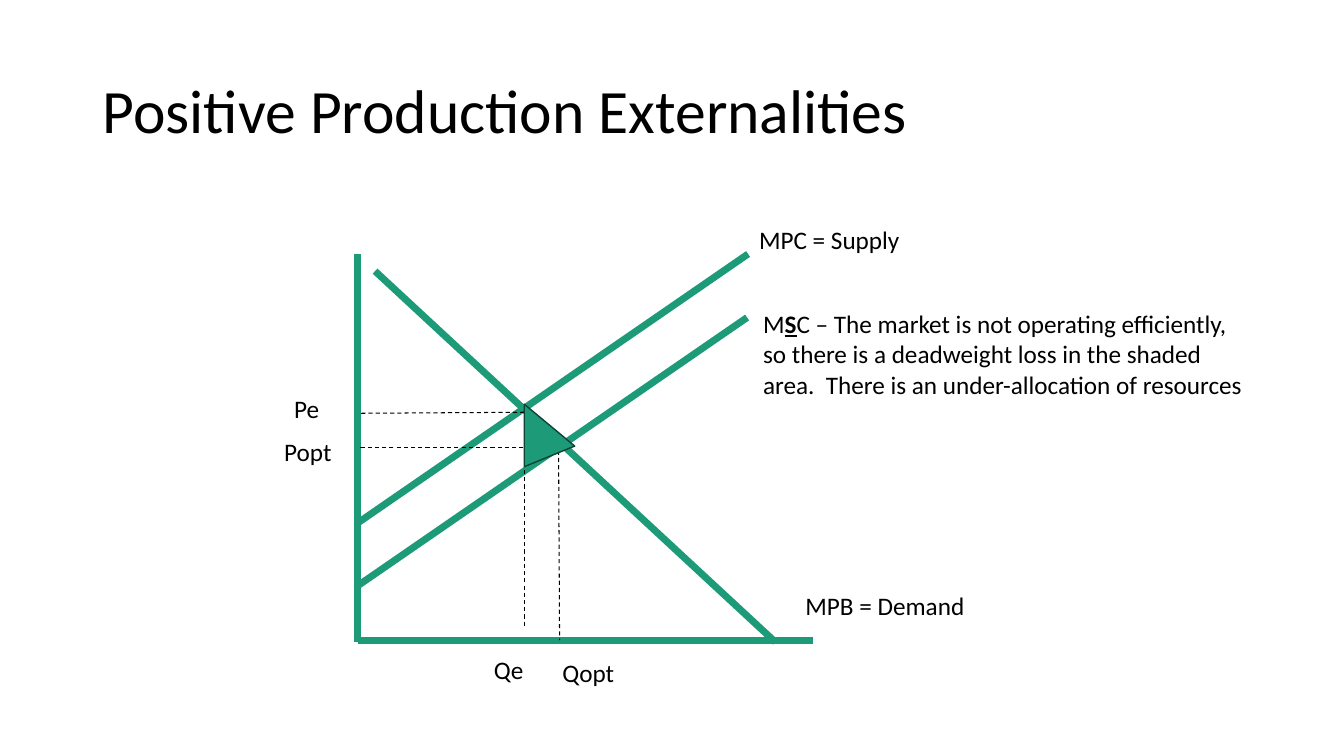
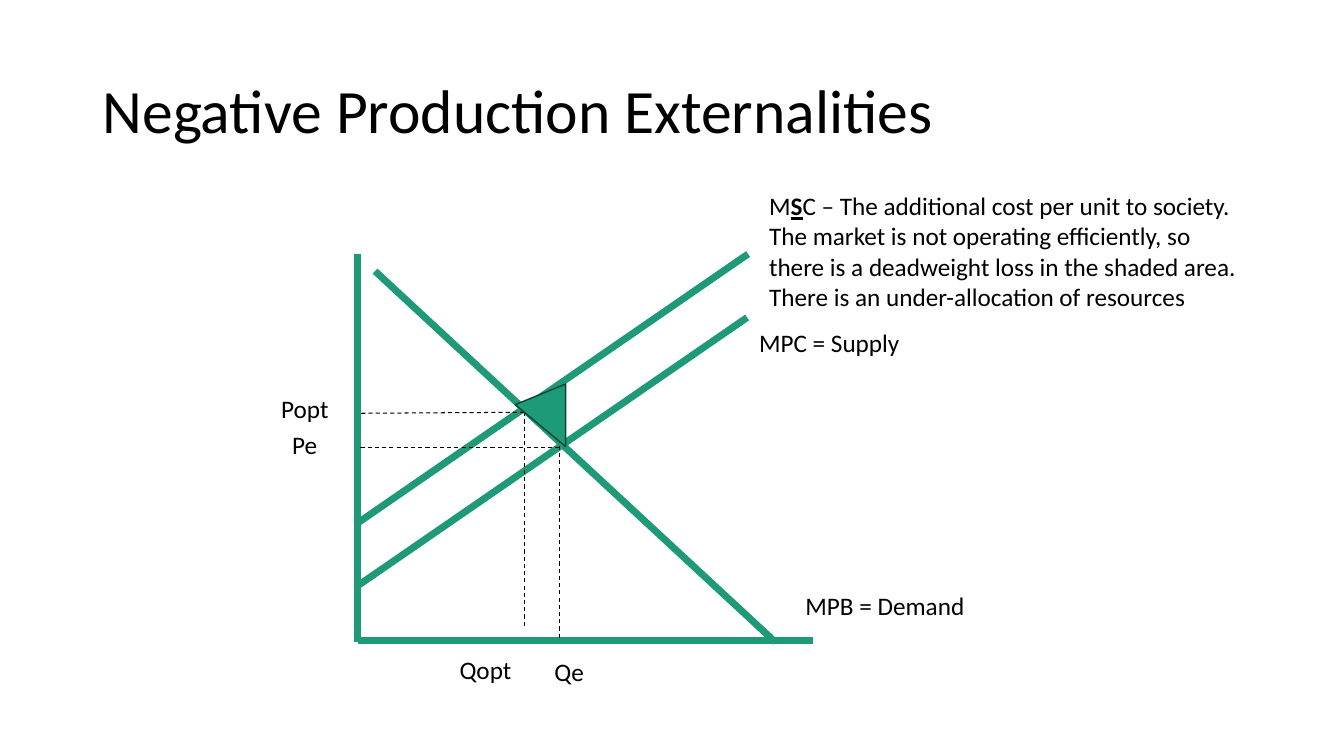
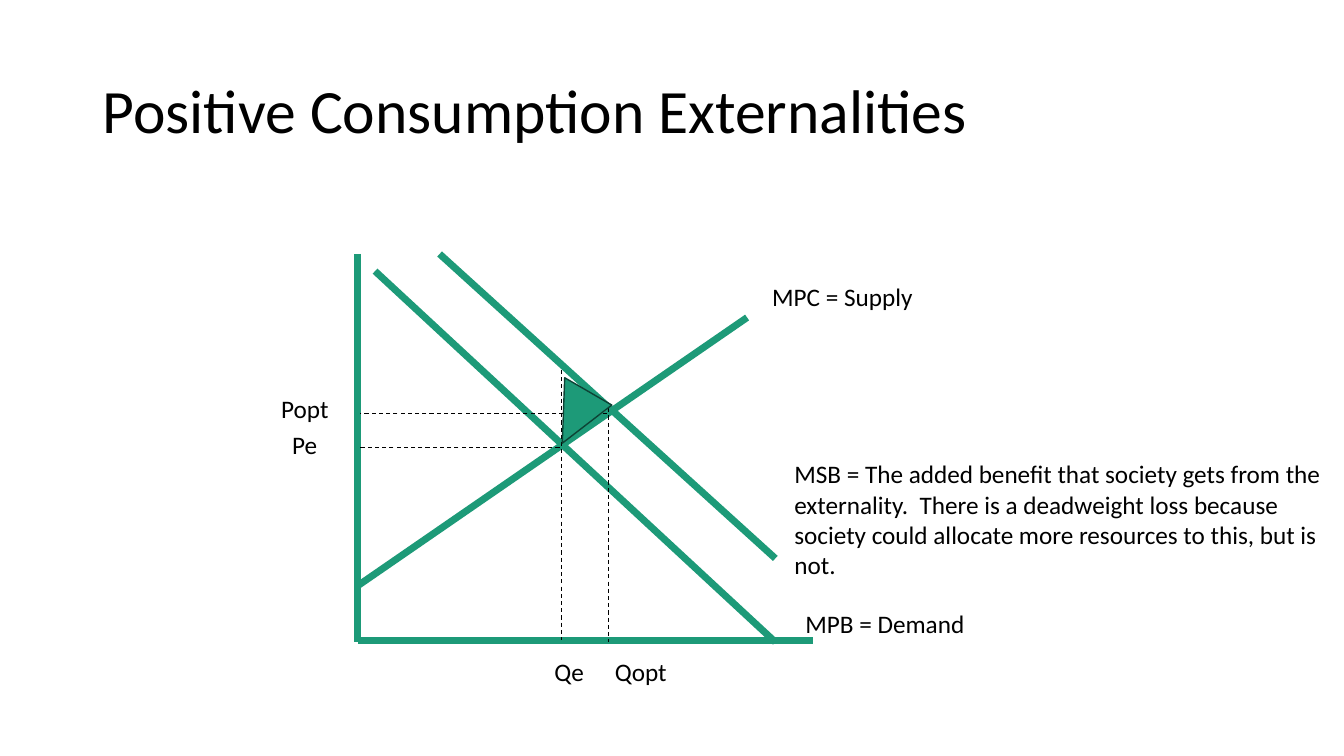
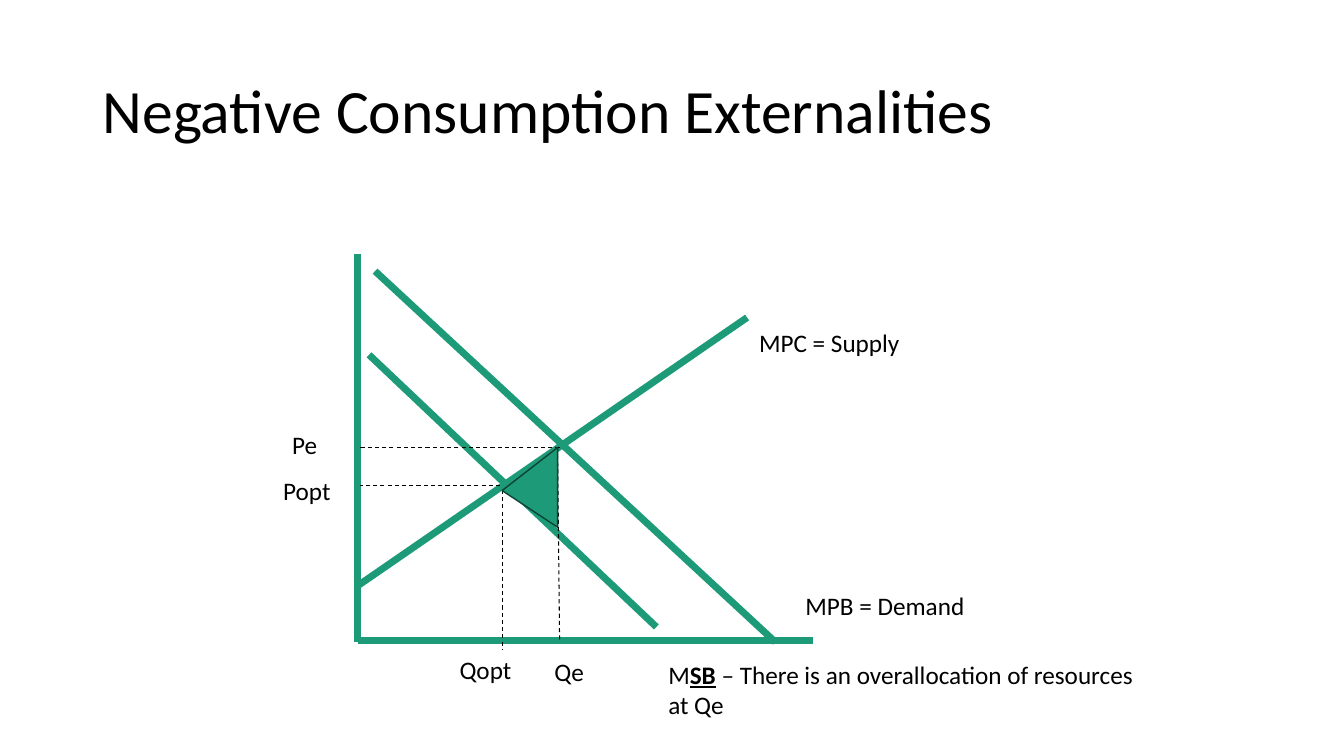
"""Build four supply and demand slides on externalities."""
from lxml import etree
from pptx import Presentation
from pptx.dml.color import RGBColor
from pptx.enum.dml import MSO_LINE
from pptx.enum.shapes import MSO_CONNECTOR, MSO_SHAPE
from pptx.enum.text import MSO_ANCHOR, MSO_AUTO_SIZE
from pptx.oxml.ns import qn
from pptx.util import Pt

PX = 9144
FONT = "Calibri"
HUES = {"ink": "000000", "green": "1D9A78", "edge": "0D4335"}
DASH = MSO_LINE.DASH
LINE = MSO_CONNECTOR.STRAIGHT
WEDGE = MSO_SHAPE.ISOSCELES_TRIANGLE
TOP, MID = MSO_ANCHOR.TOP, MSO_ANCHOR.MIDDLE
GROW, FIXED = MSO_AUTO_SIZE.SHAPE_TO_FIT_TEXT, MSO_AUTO_SIZE.NONE


def text(page, words, box, size=18, hue="ink", anchor=TOP, fit=GROW, space=1.0):
    """Add a text box; parts between asterisks are bold and underlined."""
    frame = page.shapes.add_textbox(*[n * PX for n in box]).text_frame
    frame.word_wrap = True
    frame.auto_size = fit
    frame.vertical_anchor = anchor
    para = frame.paragraphs[0]
    para.line_spacing = space
    for i, part in enumerate(words.split("*")):
        run = para.add_run()
        run.text = part
        font = run.font
        font.name, font.size = FONT, Pt(size)
        font.color.rgb = RGBColor.from_string(HUES[hue])
        if i % 2:
            font.bold = font.underline = True


def stroke(page, ends, hue="green", width=5, dash=None):
    """Add a straight line without a shadow."""
    rule = page.shapes.add_connector(LINE, *[n * PX for n in ends])
    rule.line.color.rgb = RGBColor.from_string(HUES[hue])
    rule.line.width = Pt(width)
    if dash:
        rule.line.dash_style = dash
    etree.SubElement(rule._element.spPr, qn("a:effectLst"))


BASE = [
    (355, 252, 355, 637),
    (806, 635, 355, 635),
    (741, 315, 355, 581),
    (372, 269, 769, 637),
]
LEVEL = (555, 444, 357, 444)
SIZES = {"MPC = Supply": (181, 40), "MPB = Demand": (181, 40),
         "Qopt": (90, 40), "Qe": (60, 40), "Popt": (75, 40), "Pe": (60, 40)}

PAGES = [
    {
        "title": "Positive Production Externalities",
        "curve": (742, 252, 356, 518),
        "spots": [(743, 218), (789, 581), (548, 647), (480, 644), (272, 428), (282, 385)],
        "dashes": [(520, 409, 357, 410), (520, 409, 520, 622), (554, 440, 555, 635)],
        "wedge": (514, 407, 62, 50), "turn": 90, "peak": 0.67,
        "note": "M*S*C – The market is not operating efficiently, so there is a deadweight "
                "loss in the shaded area.  There is an under-allocation of resources",
        "box": (747, 301, 497, 101),
    },
    {
        "title": "Negative Production Externalities",
        "curve": (742, 252, 356, 518),
        "spots": [(743, 320), (789, 581), (446, 644), (540, 646), (269, 385), (280, 421)],
        "dashes": [(520, 409, 357, 410), (520, 409, 520, 622), (555, 385, 555, 635)],
        "wedge": (505, 387, 62, 50), "turn": 270, "peak": 0.67,
        "note": "M*S*C – The additional cost per unit to society.  The market is not "
                "operating efficiently, so there is a deadweight loss in the shaded area.  "
                "There is an under-allocation of resources",
        "box": (753, 184, 497, 131),
    },
    {
        "title": "Positive Consumption Externalities",
        "curve": (769, 554, 436, 252),
        "spots": [(756, 274), (789, 599), (600, 646), (540, 646), (269, 385), (280, 421)],
        "dashes": [(602, 410, 357, 410), (557, 367, 557, 635), (604, 405, 604, 637)],
        "wedge": (536, 376, 62, 50), "turn": 322.4, "peak": 0.67,
        "note": "MSB = The added benefit that society gets from the externality.  There is "
                "a deadweight loss because society could allocate more resources to this, "
                "but is not.",
        "box": (778, 450, 551, 131),
    },
    {
        "title": "Negative Consumption Externalities",
        "curve": (651, 622, 366, 352),
        "spots": [(743, 320), (789, 581), (446, 644), (540, 646), (271, 467), (280, 421)],
        "dashes": [(496, 482, 357, 482), (498, 486, 498, 644), (553, 444, 555, 635)],
        "wedge": (486, 456, 79, 55), "turn": 270, "peak": 0.46,
        "note": "M*SB* – There is an overallocation of resources at Qe",
        "box": (653, 649, 497, 71),
    },
]

deck = Presentation()
deck.slide_width, deck.slide_height = 1333 * PX, 750 * PX
blank = deck.slide_layouts[6]

for data in PAGES:
    page = deck.slides.add_slide(blank)
    text(page, data["title"], (92, 40, 1150, 145), size=44, anchor=MID, fit=FIXED, space=0.9)
    for ends in BASE + [data["curve"]]:
        stroke(page, ends)
    for ends in [LEVEL] + data["dashes"]:
        stroke(page, ends, hue="ink", width=0.75, dash=DASH)
    for (label, size), spot in zip(SIZES.items(), data["spots"]):
        text(page, label, spot + size)
    wedge = page.shapes.add_shape(WEDGE, *[n * PX for n in data["wedge"]])
    wedge.adjustments[0] = data["peak"]
    wedge.rotation = data["turn"]
    wedge.shadow.inherit = False
    wedge.fill.solid()
    wedge.fill.fore_color.rgb = RGBColor.from_string(HUES["green"])
    wedge.line.color.rgb = RGBColor.from_string(HUES["edge"])
    wedge.line.width = Pt(1)
    text(page, data["note"], data["box"])

deck.save("out.pptx")
